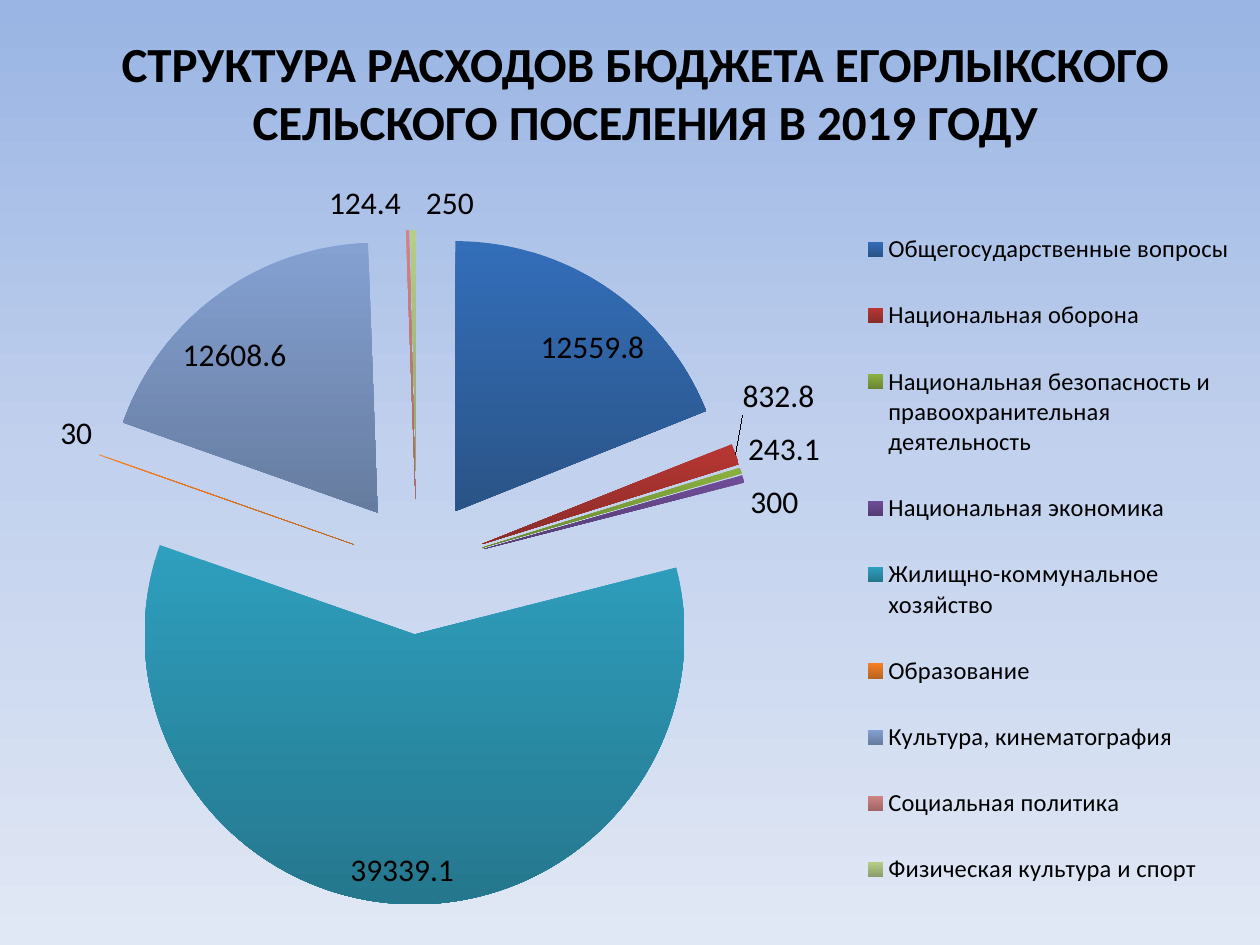
"""Build a slide with an exploded pie chart of the settlement's budget spending."""
from copy import deepcopy

from lxml.etree import SubElement
from pptx import Presentation
from pptx.chart.data import CategoryChartData
from pptx.dml.color import RGBColor
from pptx.enum.chart import XL_CHART_TYPE, XL_LABEL_POSITION, XL_LEGEND_POSITION
from pptx.enum.text import MSO_ANCHOR, PP_ALIGN
from pptx.oxml import parse_xml
from pptx.oxml.ns import nsdecls, qn
from pptx.util import Inches, Pt

THEME = {
    "font": "Calibri",
    "text": RGBColor.from_string("000000"),
    "title_size": Pt(28),
    "label_size": Pt(18),
    "legend_size": Pt(14),
    "background": ["9AB5E4", "C2D1ED", "E1E8F5"],
}
SPENDING = [
    ("Общегосударственные вопросы", 12559.8, "336EB9", "2A5487"),
    ("Национальная оборона", 832.8, "B83632", "8A2C29"),
    ("Национальная безопасность и правоохранительная деятельность", 243.1, "8BB03F", "6A8632"),
    ("Национальная экономика", 300, "704D98", "553C73"),
    ("Жилищно-коммунальное хозяйство", 39339.1, "2E9FBE", "25778D"),
    ("Образование", 30, "F58023", "BA6420"),
    ("Культура, кинематография", 12608.6, "84A1D2", "667C9F"),
    ("Социальная политика", 124.4, "D28483", "9F6665"),
    ("Физическая культура и спорт", 250, "B5CF88", "8B9E6A"),
]


def fill_downward(fill, first, last):
    fill.gradient()
    fill.gradient_angle = 270
    for stop, color, position in zip(fill.gradient_stops, (first, last), (0, 1)):
        stop.color.rgb = RGBColor.from_string(color)
        stop.position = position


def set_layout(parent, index, inner, x, y, width, height):
    target = '<c:layoutTarget val="inner"/>' if inner else ""
    parent.insert(index, parse_xml(
        f'<c:layout {nsdecls("c")}><c:manualLayout>{target}'
        '<c:xMode val="edge"/><c:yMode val="edge"/>'
        f'<c:x val="{x}"/><c:y val="{y}"/><c:w val="{width}"/><c:h val="{height}"/>'
        '</c:manualLayout></c:layout>'))


presentation = Presentation()
presentation.slide_width = Inches(10)
presentation.slide_height = Inches(7.5)
slide = presentation.slides.add_slide(presentation.slide_layouts[5])

top_color, middle_color, bottom_color = THEME["background"]
background_fill = slide.background.fill
fill_downward(background_fill, top_color, bottom_color)
stop_list = next(slide.element.iter(qn("a:gsLst")))
stop_list.insert(1, deepcopy(stop_list[0]))
middle_stop = background_fill.gradient_stops[1]
middle_stop.color.rgb = RGBColor.from_string(middle_color)
middle_stop.position = 0.5

title = slide.shapes.title
title.left, title.top, title.width, title.height = (
    Inches(length) for length in (0.83, 0.21, 8.58, 1.04))
title.text_frame.text = "СТРУКТУРА РАСХОДОВ БЮДЖЕТА ЕГОРЛЫКСКОГО СЕЛЬСКОГО ПОСЕЛЕНИЯ В 2019 ГОДУ"
title.text_frame.word_wrap = True
title.text_frame.vertical_anchor = MSO_ANCHOR.MIDDLE
title_paragraph = title.text_frame.paragraphs[0]
title_paragraph.alignment = PP_ALIGN.CENTER
title_font = title_paragraph.runs[0].font
title_font.name = THEME["font"]
title_font.size = THEME["title_size"]
title_font.bold = True
title_font.color.rgb = THEME["text"]

categories, amounts, light_colors, dark_colors = zip(*SPENDING)
chart_data = CategoryChartData(number_format="General")
chart_data.categories = categories
chart_data.add_series("Series 1", amounts)
chart = slide.shapes.add_chart(
    XL_CHART_TYPE.PIE, Inches(0.04), Inches(1.33), Inches(9.92), Inches(6.04), chart_data).chart
chart.has_title = False
chart.font.name = THEME["font"]
chart.font.size = THEME["label_size"]
chart.font.color.rgb = THEME["text"]

chart.has_legend = True
legend = chart.legend
legend.position = XL_LEGEND_POSITION.RIGHT
legend.include_in_layout = False
legend.font.name = THEME["font"]
legend.font.size = THEME["legend_size"]
legend.font.color.rgb = THEME["text"]

plot = chart.plots[0]
plot.vary_by_categories = True
series = plot.series[0]
explosion = SubElement(series._element, qn("c:explosion"))
explosion.set("val", "25")
series._element.find(qn("c:tx")).addnext(explosion)
for index, (light, dark) in enumerate(zip(light_colors, dark_colors)):
    fill_downward(series.points[index].format.fill, light, dark)

plot.has_data_labels = True
labels = plot.data_labels
labels.show_value = True
labels.position = XL_LABEL_POSITION.BEST_FIT
labels.font.name = THEME["font"]
labels.font.size = THEME["label_size"]
labels.font.color.rgb = THEME["text"]

plot_area = plot._element.getparent()
for old_layout in plot_area.findall(qn("c:layout")):
    plot_area.remove(old_layout)
set_layout(plot_area, 0, True, 0.06, 0.08, 0.54, 0.89)
for old_layout in legend._element.findall(qn("c:layout")):
    legend._element.remove(old_layout)
set_layout(legend._element, 1, False, 0.68, 0.04, 0.31, 0.95)

presentation.save("out.pptx")
